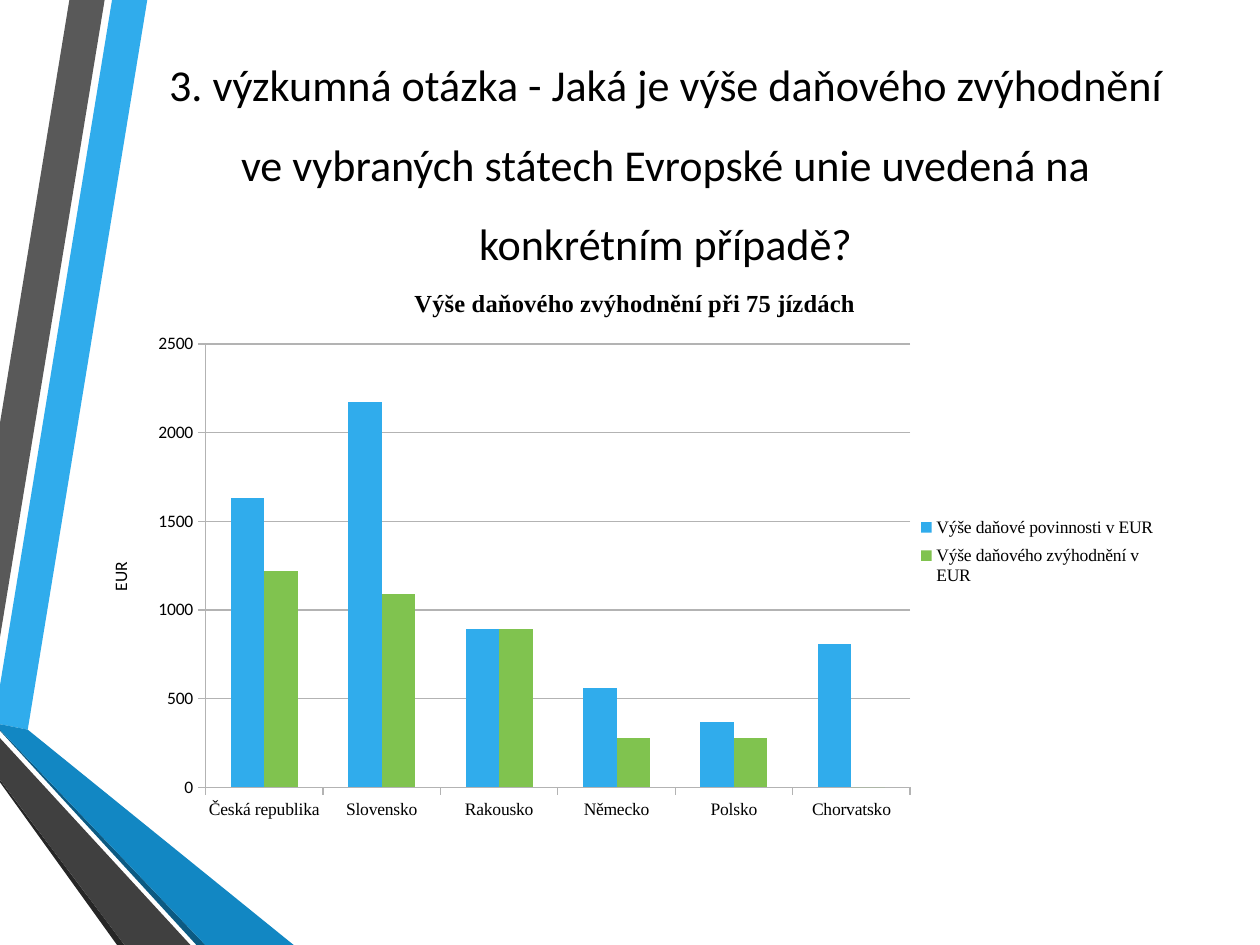
from lxml.etree import SubElement
from pptx import Presentation
from pptx.chart.data import CategoryChartData
from pptx.dml.color import RGBColor
from pptx.enum.chart import XL_CHART_TYPE, XL_LEGEND_POSITION, XL_TICK_MARK
from pptx.enum.text import MSO_ANCHOR, PP_ALIGN
from pptx.oxml.ns import qn
from pptx.util import Cm, Pt

COLORS = {
    "text": "000000",
    "axis": "B3B3B3",
    "blue": "30ACEC",
    "green": "80C34F",
    "gray": "595959",
    "black shade": "262626",
    "navy": "0C5A82",
    "deep blue": "1287C3",
    "charcoal": "404040",
}
BODY_FONT = "Calibri"
SERIF_FONT = "Times New Roman"

# Ribbon outlines in centimetres, back to front
RIBBONS = [
    ("blue", [(0, 13.82), (0, 14.6), (0.56, 14.71), (2.97, 0), (2.26, 0)]),
    ("gray", [(2.11, 0), (1.4, 0), (0, 8.53), (0, 12.85)]),
    ("black shade", [(0, 15.72), (0, 15.77), (2.36, 19.05), (2.51, 19.05)]),
    ("navy", [(0, 14.71), (0, 14.73), (3.96, 19.05), (4.14, 19.05)]),
    ("deep blue", [(0, 14.71), (4.14, 19.05), (5.92, 19.05), (0.56, 14.71), (0, 14.6)]),
    ("charcoal", [(0, 15.72), (2.51, 19.05), (3.84, 19.05), (0, 14.88)]),
]

COUNTRIES = ["Česká republika", "Slovensko", "Rakousko", "Německo", "Polsko", "Chorvatsko"]
SERIES = [
    ("Výše daňové povinnosti v EUR", "blue", [1630, 2170, 890, 560, 370, 810]),
    ("Výše daňového zvýhodnění v EUR", "green", [1220, 1090, 890, 280, 280, 0]),
]


def set_layout(element, position, left, top, width, height, inner=False):
    """Place a chart part by fractions of the chart's size."""
    for old_layout in element.findall(qn("c:layout")):
        element.remove(old_layout)
    layout = SubElement(element, qn("c:layout"))
    element.insert(position, layout)
    manual = SubElement(layout, qn("c:manualLayout"))
    settings = [("xMode", "edge"), ("yMode", "edge"),
                ("x", left), ("y", top), ("w", width), ("h", height)]
    if inner:
        settings.insert(0, ("layoutTarget", "inner"))
    for name, value in settings:
        SubElement(manual, qn(f"c:{name}")).set("val", str(value))


class SlideBuilder:
    def __init__(self, slide):
        self.slide = slide

    def color(self, name):
        return RGBColor.from_string(COLORS[name])

    def style(self, font, size, name=BODY_FONT, bold=False):
        font.name = name
        font.size = Pt(size)
        font.bold = bold
        font.color.rgb = self.color("text")

    def fill(self, target, color):
        target.fill.solid()
        target.fill.fore_color.rgb = self.color(color)

    def ribbon(self, color, points):
        corners = [(Cm(x), Cm(y)) for x, y in points]
        builder = self.slide.shapes.build_freeform(*corners[0])
        builder.add_line_segments(corners[1:], close=True)
        shape = builder.convert_to_shape()
        shape.shadow.inherit = False
        self.fill(shape, color)
        shape.line.fill.background()

    def title(self, text, left, top, width, height):
        box = self.slide.shapes.add_textbox(Cm(left), Cm(top), Cm(width), Cm(height))
        frame = box.text_frame
        frame.word_wrap = True
        frame.vertical_anchor = MSO_ANCHOR.MIDDLE
        paragraph = frame.paragraphs[0]
        paragraph.alignment = PP_ALIGN.CENTER
        paragraph.line_spacing = 1.5
        self.add_run(paragraph, text, 25.2)

    def add_run(self, paragraph, text, size, name=BODY_FONT, bold=False):
        run = paragraph.add_run()
        run.text = text
        self.style(run.font, size, name, bold)

    def axis(self, axis, font_name):
        axis.major_tick_mark = XL_TICK_MARK.OUTSIDE
        axis.minor_tick_mark = XL_TICK_MARK.NONE
        self.style(axis.tick_labels.font, 10, font_name)
        axis.format.line.color.rgb = self.color("axis")

    def column_chart(self, title, unit, left, top, width, height):
        data = CategoryChartData(number_format="General")
        data.categories = COUNTRIES
        for name, _, values in SERIES:
            data.add_series(name, values)
        chart = self.slide.shapes.add_chart(
            XL_CHART_TYPE.COLUMN_CLUSTERED,
            Cm(left), Cm(top), Cm(width), Cm(height), data).chart
        self.style(chart.font, 10)

        chart.has_title = True
        self.add_run(chart.chart_title.text_frame.paragraphs[0], title, 14, SERIF_FONT, True)
        chart.chart_title.include_in_layout = False

        plot = chart.plots[0]
        plot.gap_width = 150
        plot.overlap = 0
        plot.vary_by_categories = False
        for series, (_, color, _) in zip(plot.series, SERIES):
            self.fill(series.format, color)

        self.axis(chart.category_axis, SERIF_FONT)
        value_axis = chart.value_axis
        self.axis(value_axis, BODY_FONT)
        value_axis.minimum_scale = 0
        value_axis.maximum_scale = 2500
        value_axis.major_unit = 500
        value_axis.has_major_gridlines = True
        value_axis.major_gridlines.format.line.color.rgb = self.color("axis")
        value_axis.has_title = True
        self.add_run(value_axis.axis_title.text_frame.paragraphs[0], unit, 10)

        chart.has_legend = True
        legend = chart.legend
        legend.position = XL_LEGEND_POSITION.RIGHT
        legend.include_in_layout = False
        self.style(legend.font, 10, SERIF_FONT)

        plot_area = chart.element.find(".//" + qn("c:plotArea"))
        set_layout(plot_area, 0, 0.11, 0.14, 0.64, 0.78, inner=True)
        legend_element = chart.element.find(".//" + qn("c:legend"))
        set_layout(legend_element, 1, 0.75, 0.43, 0.23, 0.15)


def main():
    presentation = Presentation()
    presentation.slide_width = Cm(25.4)
    presentation.slide_height = Cm(19.05)
    builder = SlideBuilder(presentation.slides.add_slide(presentation.slide_layouts[6]))

    for color, points in RIBBONS:
        builder.ribbon(color, points)
    builder.title(
        "3. výzkumná otázka - Jaká je výše daňového zvýhodnění ve vybraných státech "
        "Evropské unie uvedená na konkrétním případě?",
        2.69, 0.53, 21.46, 5)
    builder.column_chart("Výše daňového zvýhodnění při 75 jízdách", "EUR",
                         1.7, 5.33, 22.2, 11.46)
    presentation.save("out.pptx")


if __name__ == "__main__":
    main()
